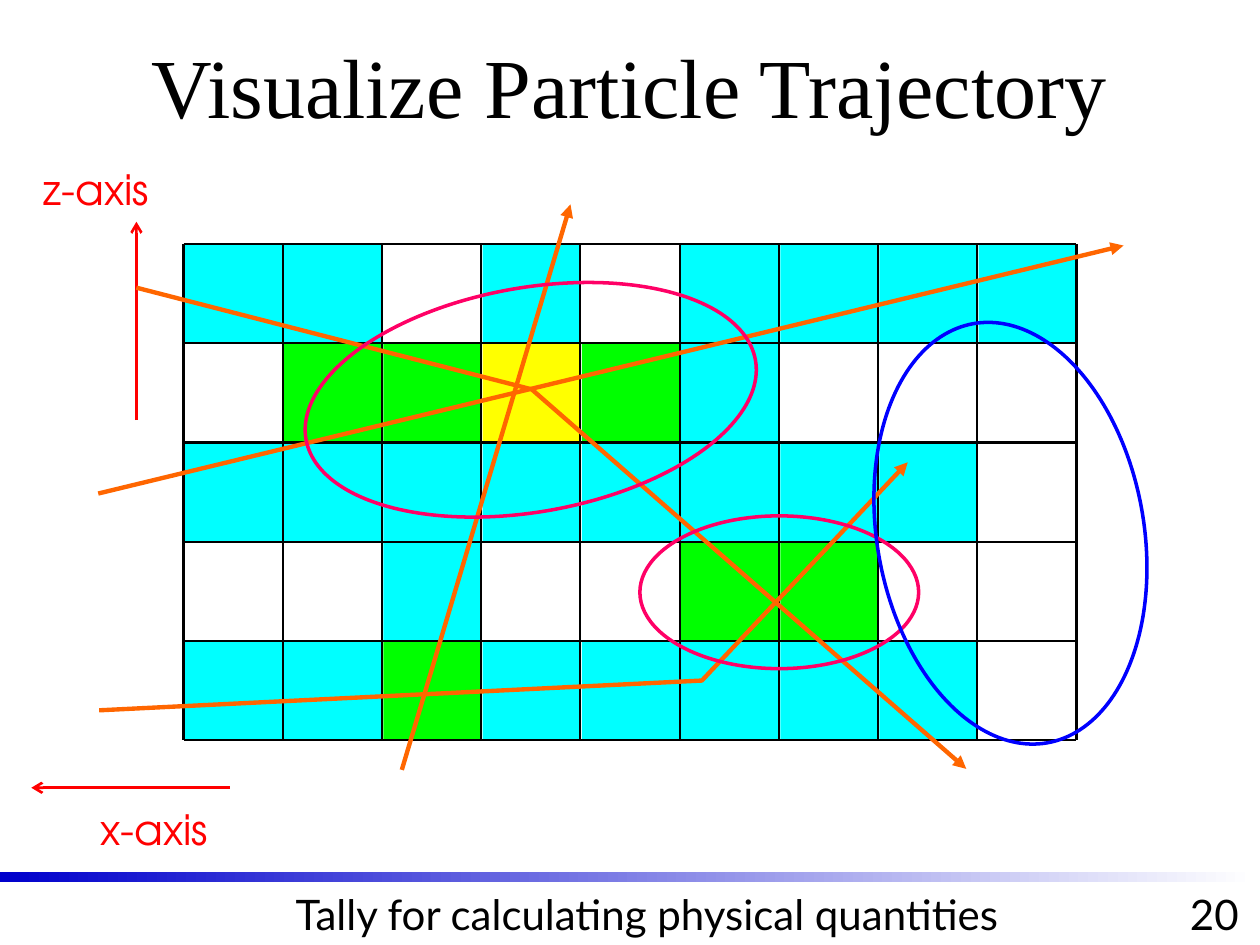
from dataclasses import dataclass

from lxml.etree import SubElement
from pptx import Presentation
from pptx.dml.color import RGBColor
from pptx.enum.shapes import MSO_CONNECTOR, MSO_SHAPE
from pptx.enum.text import MSO_ANCHOR, PP_ALIGN
from pptx.oxml.ns import qn
from pptx.slide import Slide
from pptx.util import Cm, Pt

CYAN, GREEN, YELLOW = "00FFFF", "00FF00", "FFFF00"
RED, ORANGE, PINK, BLUE, BLACK = "FF0000", "FF6600", "FF0066", "0000FF", "000000"
CELL_COLORS = {"C": CYAN, "G": GREEN, "Y": YELLOW}
TALLY_ROWS = [
    "CC.C.CCCC",
    ".GGYGC...",
    "CCCCCCCC.",
    "..C..GG..",
    "CCGCCCCC.",
]
GRID_LEFT, GRID_TOP, PITCH = 3.7, 4.92, 2


def color(hex_string):
    return RGBColor.from_string(hex_string)


@dataclass
class Canvas:
    slide: Slide
    body_font: str = "Lato"
    axis_font: str = "TeX Gyre Adventor"
    title_font: str = "Times New Roman"

    def style_line(self, line, hex_string, width, arrow=None):
        line.color.rgb = color(hex_string)
        line.width = Pt(width)
        if arrow:
            properties = line._get_or_add_ln()
            SubElement(properties, qn("a:tailEnd"), type=arrow)

    def shape(self, kind, left, top, width, height):
        shape = self.slide.shapes.add_shape(
            kind, Cm(left), Cm(top), Cm(width), Cm(height))
        shape.shadow.inherit = False
        return shape

    def cell(self, left, top, size, hex_string):
        shape = self.shape(MSO_SHAPE.RECTANGLE, left, top, size, size)
        shape.fill.solid()
        shape.fill.fore_color.rgb = color(hex_string)
        shape.line.fill.background()

    def gradient_bar(self, left, top, width, height, start, end):
        shape = self.shape(MSO_SHAPE.RECTANGLE, left, top, width, height)
        shape.line.fill.background()
        shape.fill.gradient()
        shape.fill.gradient_angle = 0
        for stop, hex_string in zip(shape.fill.gradient_stops, (start, end)):
            stop.color.rgb = color(hex_string)

    def ellipse(self, left, top, width, height, hex_string, rotation=0):
        shape = self.shape(MSO_SHAPE.OVAL, left, top, width, height)
        shape.rotation = rotation
        shape.fill.background()
        self.style_line(shape.line, hex_string, 2)

    def line(self, start, end, hex_string, width, arrow=None):
        connector = self.slide.shapes.add_connector(
            MSO_CONNECTOR.STRAIGHT, *map(Cm, start + end))
        self.style_line(connector.line, hex_string, width, arrow)
        SubElement(connector._element.spPr, qn("a:effectLst"))

    def bent_track(self, start, *points):
        builder = self.slide.shapes.build_freeform(*map(Cm, start))
        builder.add_line_segments(
            [(Cm(x), Cm(y)) for x, y in points], close=False)
        shape = builder.convert_to_shape()
        shape.fill.background()
        self.style_line(shape.line, ORANGE, 2.5, "triangle")
        shape.shadow.inherit = False

    def text(self, text, left, top, width, height, font, size=24,
             hex_string=BLACK, align=PP_ALIGN.CENTER, anchor=MSO_ANCHOR.TOP):
        box = self.slide.shapes.add_textbox(
            Cm(left), Cm(top), Cm(width), Cm(height))
        frame = box.text_frame
        frame.word_wrap = True
        frame.vertical_anchor = anchor
        paragraph = frame.paragraphs[0]
        paragraph.text = text
        paragraph.alignment = align
        paragraph.font.name = font
        paragraph.font.size = Pt(size)
        paragraph.font.color.rgb = color(hex_string)


def draw_tally_grid(canvas):
    for row, codes in enumerate(TALLY_ROWS):
        for column, code in enumerate(codes):
            if code in CELL_COLORS:
                canvas.cell(GRID_LEFT + column * PITCH + 0.03,
                            GRID_TOP + row * PITCH + 0.02,
                            1.98, CELL_COLORS[code])
    rows, columns = len(TALLY_ROWS), len(TALLY_ROWS[0])
    right, bottom = GRID_LEFT + columns * PITCH, GRID_TOP + rows * PITCH
    for row in range(rows + 1):
        y = GRID_TOP + row * PITCH
        canvas.line((GRID_LEFT, y), (right, y), BLACK, 1.25)
    for column in range(columns + 1):
        x = GRID_LEFT + column * PITCH
        canvas.line((x, GRID_TOP), (x, bottom), BLACK, 1.25)


def draw_axes(canvas):
    canvas.line((2.75, 8.47), (2.75, 4.47), RED, 1.5, "arrow")
    canvas.line((4.63, 15.88), (0.63, 15.88), RED, 1.5, "arrow")
    canvas.text("x-axis", 0.84, 16.08, 3.6, 1.27, canvas.axis_font,
                hex_string=RED, align=PP_ALIGN.RIGHT)
    canvas.text("z-axis", 0.63, 3.17, 3.6, 1.27, canvas.axis_font,
                hex_string=RED, align=PP_ALIGN.LEFT)


def draw_trajectories(canvas):
    canvas.line((8.1, 15.52), (11.5, 4.12), ORANGE, 2.5, "triangle")
    canvas.line((1.98, 9.95), (22.65, 4.95), ORANGE, 2.5, "triangle")
    canvas.bent_track((2.75, 5.8), (10.72, 7.85), (19.48, 15.5))
    canvas.bent_track((2, 14.32), (14.15, 13.72), (18.3, 9.32))


def main():
    presentation = Presentation()
    presentation.slide_width = Cm(25.4)
    presentation.slide_height = Cm(19.05)
    slide = presentation.slides.add_slide(presentation.slide_layouts[6])
    canvas = Canvas(slide)

    canvas.gradient_bar(0, 17.58, 25.3, 0.2, "0000CC", "FFFFFF")
    canvas.text("20", 23.48, 17.78, 2, 1.27, canvas.body_font)
    draw_tally_grid(canvas)
    draw_axes(canvas)
    draw_trajectories(canvas)
    canvas.ellipse(6.1, 5.8, 9.2, 4.52, PINK, rotation=350)
    canvas.ellipse(12.9, 10.4, 5.62, 3.08, PINK)
    canvas.ellipse(17.68, 6.46, 5.38, 8.58, BLUE, rotation=350)
    canvas.text("Visualize Particle Trajectory", 0.63, 0.13, 24.13, 3.17,
                canvas.title_font, size=48, anchor=MSO_ANCHOR.MIDDLE)
    canvas.text("Tally for calculating physical quantities",
                5.38, 17.78, 15.32, 1.27, canvas.body_font)
    presentation.save("out.pptx")


if __name__ == "__main__":
    main()
